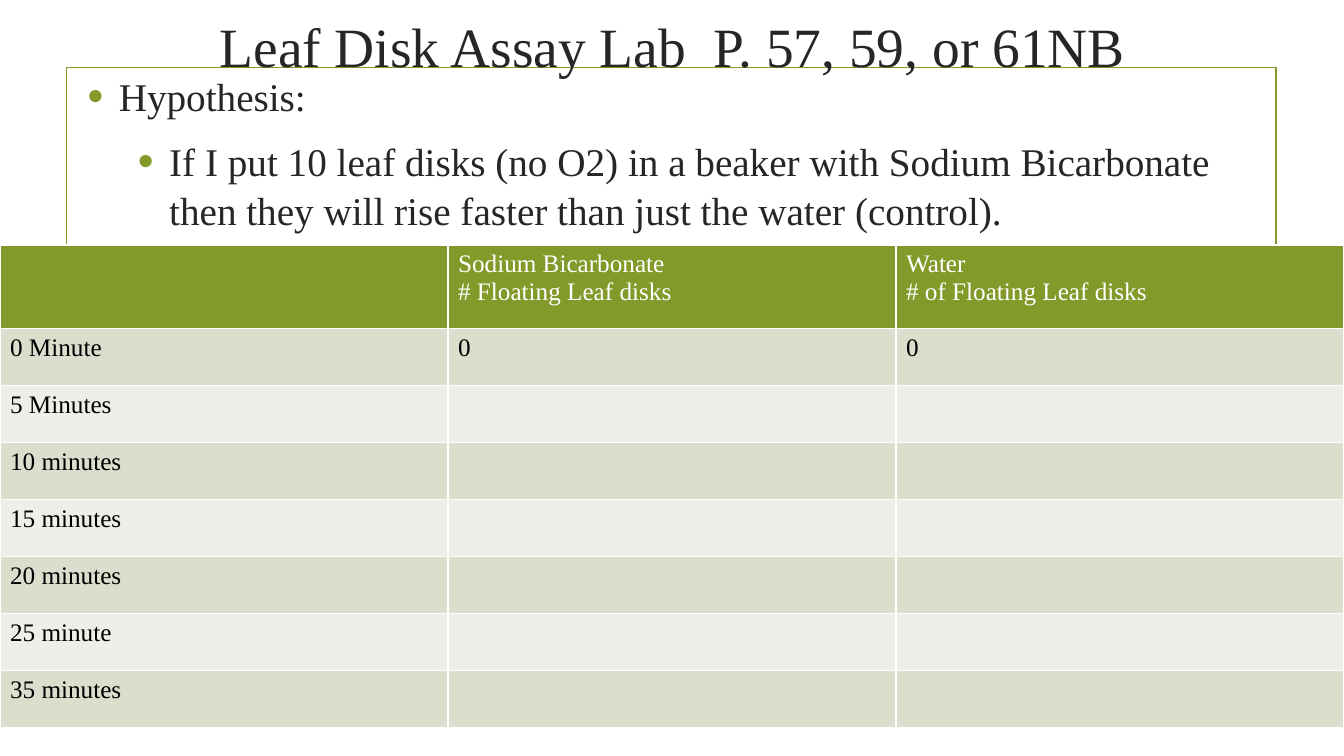
from lxml.etree import SubElement
from pptx import Presentation
from pptx.dml.color import RGBColor
from pptx.enum.shapes import MSO_SHAPE as Shape
from pptx.enum.text import MSO_ANCHOR as Anchor, PP_ALIGN as Align
from pptx.oxml import parse_xml
from pptx.oxml.ns import nsdecls, qn
from pptx.util import Inches, Pt

FONT = "Times New Roman"
OLIVE = RGBColor(0x83, 0x99, 0x2A)
DARK = RGBColor(0x26, 0x26, 0x26)
BLACK = RGBColor(0x00, 0x00, 0x00)
WHITE = RGBColor(0xFF, 0xFF, 0xFF)
BANDS = [RGBColor(0xD9, 0xDE, 0xCD), RGBColor(0xED, 0xEF, 0xE8)]

HEADER = ["", "Sodium Bicarbonate\n# Floating Leaf disks", "Water\n# of Floating Leaf disks"]
TIMES = ["0 Minute", "5 Minutes", "10 minutes", "15 minutes", "20 minutes", "25 minute", "35 minutes"]
HYPOTHESIS = (
    "If I put 10 leaf disks (no O2) in a beaker with Sodium Bicarbonate "
    "then they will rise faster than just the water (control)."
)


def write_text(paragraph, text, size=18, color=BLACK, align=Align.LEFT):
    """Write one formatted run into a paragraph."""
    paragraph.alignment = align
    run = paragraph.add_run()
    run.text = text
    run.font.name = FONT
    run.font.size = Pt(size)
    run.font.bold = False
    run.font.color.rgb = color


def add_text_frame(slide, left, top, width, height, inset_top):
    """Add a wrapping text box and return its text frame."""
    box = slide.shapes.add_textbox(Inches(left), Inches(top), Inches(width), Inches(height))
    frame = box.text_frame
    frame.word_wrap = True
    frame.vertical_anchor = Anchor.TOP
    frame.margin_top = Inches(inset_top)
    return frame


def add_frame(slide, left, top, width, height):
    """Add the olive outline behind the text."""
    shape = slide.shapes.add_shape(
        Shape.RECTANGLE, Inches(left), Inches(top), Inches(width), Inches(height)
    )
    shape.shadow.inherit = False
    shape.fill.background()
    shape.line.color.rgb = OLIVE
    shape.line.width = Pt(1.25)


def set_bullet(paragraph, indent, level):
    """Give a paragraph an olive hanging bullet."""
    paragraph.level = level
    properties = paragraph._p.get_or_add_pPr()
    properties.set("marL", str(Inches(indent)))
    properties.set("indent", str(-Inches(0.31)))
    color = SubElement(properties, qn("a:buClr"))
    SubElement(color, qn("a:srgbClr"), val=str(OLIVE))
    SubElement(properties, qn("a:buSzPct"), val="115000")
    SubElement(properties, qn("a:buFont"), typeface="Arial")
    SubElement(properties, qn("a:buChar"), char="•")


def add_hypothesis(slide):
    """Add the two-level hypothesis list."""
    frame = add_text_frame(slide, 0.77, 0, 11.88, 2.92, 0.7)
    for level, text in enumerate(["Hypothesis:", HYPOTHESIS]):
        paragraph = frame.paragraphs[0] if level == 0 else frame.add_paragraph()
        set_bullet(paragraph, 0.31 + 0.5 * level, level)
        paragraph.line_spacing = 1.04
        paragraph.space_before = Pt(5.6 * level)
        paragraph.space_after = Pt(6)
        write_text(paragraph, text, size=28, color=DARK)


def style_cell(cell, text, fill, color):
    """Fill a cell, draw its white borders and write its lines."""
    cell.fill.solid()
    cell.fill.fore_color.rgb = fill
    properties = cell._tc.get_or_add_tcPr()
    for index, side in enumerate("LRTB"):
        properties.insert(index, parse_xml(
            f'<a:ln{side} {nsdecls("a")} w="{Pt(1)}"><a:solidFill>'
            f'<a:srgbClr val="{WHITE}"/></a:solidFill></a:ln{side}>'
        ))
    for index, line in enumerate(text.split("\n") if text else []):
        paragraph = cell.text_frame.add_paragraph() if index else cell.text_frame.paragraphs[0]
        write_text(paragraph, line, color=color)


def add_results(slide):
    """Add the table of floating disks over time."""
    rows = [HEADER] + [[time, "", ""] for time in TIMES]
    rows[1][1:] = ["0", "0"]
    table = slide.shapes.add_table(
        len(rows), len(HEADER), Inches(0), Inches(2.43), Inches(13.33), Inches(4.79)
    ).table
    table.first_row = False
    table.horz_banding = False
    for column in table.columns:
        column.width = Inches(13.33 / len(HEADER))
    for row_index, values in enumerate(rows):
        is_header = row_index == 0
        table.rows[row_index].height = Inches(0.83 if is_header else 3.96 / len(TIMES))
        fill = OLIVE if is_header else BANDS[(row_index - 1) % 2]
        for column_index, text in enumerate(values):
            style_cell(table.cell(row_index, column_index), text, fill, WHITE if is_header else BLACK)


def main():
    """Build the leaf disk lab slide."""
    presentation = Presentation()
    presentation.slide_width = Inches(13.33)
    presentation.slide_height = Inches(7.5)
    slide = presentation.slides.add_slide(presentation.slide_layouts[6])
    add_frame(slide, 0.66, 0.67, 12, 6.17)
    title = add_text_frame(slide, 1.42, 0, 10.5, 1.43, 0.12)
    write_text(
        title.paragraphs[0], "Leaf Disk Assay Lab  P. 57, 59, or 61NB",
        size=39.6, color=DARK, align=Align.CENTER,
    )
    add_hypothesis(slide)
    add_results(slide)
    presentation.save("out.pptx")


if __name__ == "__main__":
    main()
